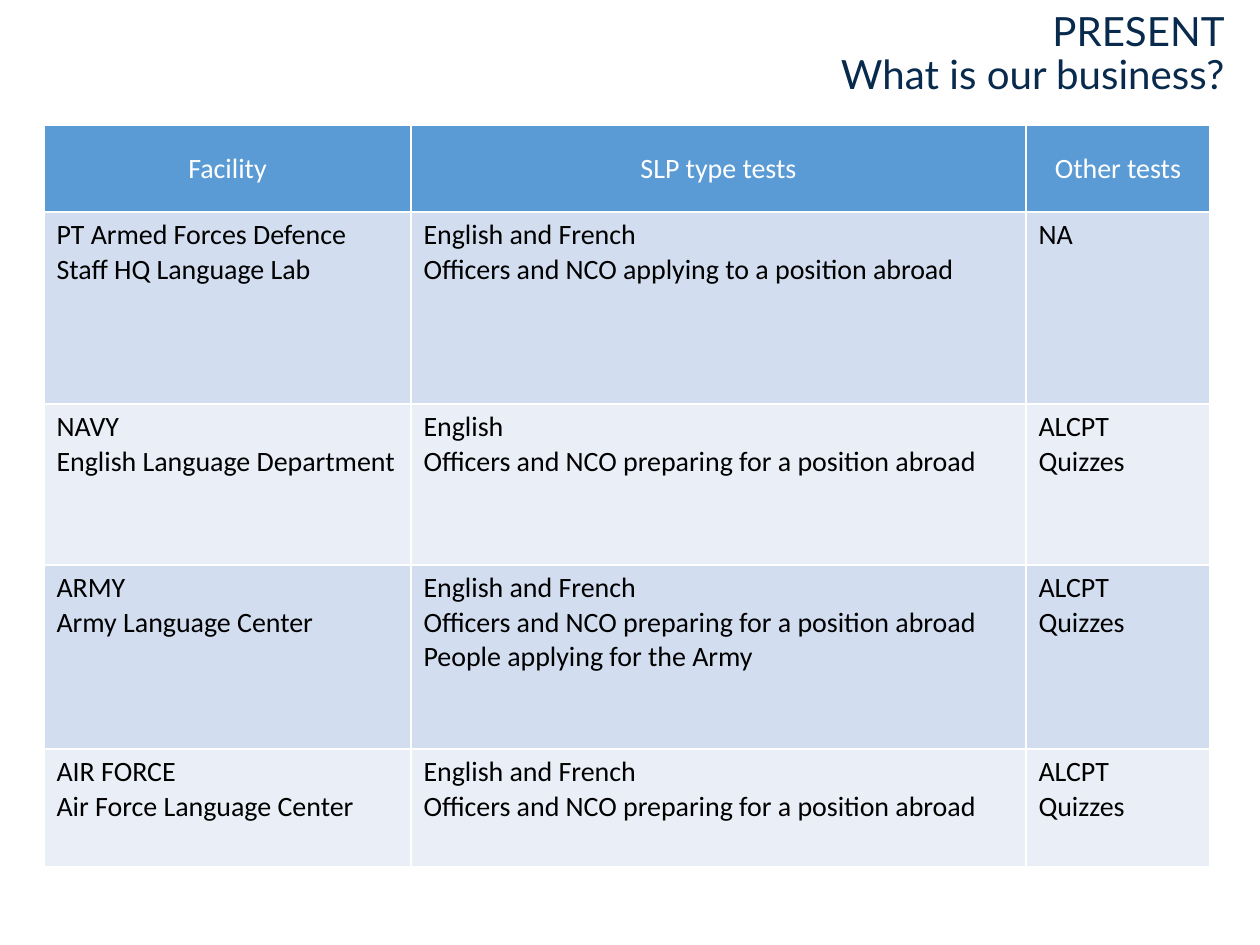
import dataclasses

import pptx
import pptx.dml.color
import pptx.enum.text
import pptx.oxml
import pptx.oxml.ns
import pptx.util

EMU_PER_PX = 914400 / 126
ALIGN = pptx.enum.text.PP_ALIGN
ANCHOR = pptx.enum.text.MSO_ANCHOR


@dataclasses.dataclass(frozen=True)
class Theme:
    """Colours, fonts and sizes of the slide."""
    title_font: str = "Lato"
    body_font: str = "Calibri"
    title_size: int = 23
    body_size: int = 16
    title_color: str = "082A4C"
    header_color: str = "FFFFFF"
    body_color: str = "000000"
    header_fill: str = "5B9BD5"
    bands: tuple = ("D2DEEF", "EAEFF7")
    rule_color: str = "FFFFFF"
    rule_width: int = 1


THEME = Theme()
HEADINGS = ["Facility", "SLP type tests", "Other tests"]
PREPARING = "Officers and NCO preparing for a position abroad"
QUIZZES = "ALCPT\nQuizzes"
FACILITIES = [
    ["PT Armed Forces Defence Staff HQ Language Lab",
     "English and French\nOfficers and NCO applying to a position abroad", "NA"],
    ["NAVY\nEnglish Language Department", f"English\n{PREPARING}", QUIZZES],
    ["ARMY\nArmy Language Center",
     f"English and French\n{PREPARING}\nPeople applying for the Army", QUIZZES],
    ["AIR FORCE\nAir Force Language Center", f"English and French\n{PREPARING}", QUIZZES],
]
COLUMN_WIDTHS = [367, 615, 184]
ROW_HEIGHTS = [87, 192, 161, 184, 118]


def px(length):
    """Turn px into EMU."""
    return pptx.util.Emu(round(length * EMU_PER_PX))


def rgb(color):
    """Turn a hex string into a colour."""
    return pptx.dml.color.RGBColor.from_string(color)


def format_text(text_frame, font, size, color, align, spacing=None):
    """Format every paragraph and run of a text frame."""
    for paragraph in text_frame.paragraphs:
        paragraph.alignment = align
        paragraph.line_spacing = spacing
        for run in paragraph.runs:
            run.font.name = font
            run.font.size = pptx.util.Pt(size)
            run.font.color.rgb = rgb(color)


def rule_cell(cell):
    """Draw the four borders of a cell."""
    properties = cell._tc.get_or_add_tcPr()
    width = pptx.util.Pt(THEME.rule_width)
    for side in "LRTB":
        properties.append(pptx.oxml.parse_xml(
            f'<a:ln{side} {pptx.oxml.ns.nsdecls("a")} w="{width}"><a:solidFill>'
            f'<a:srgbClr val="{THEME.rule_color}"/></a:solidFill></a:ln{side}>'))


def place_title(slide, left, top, width, height):
    """Place the right-aligned title in its box."""
    title = slide.shapes.title
    title.left, title.top, title.width, title.height = map(px, (left, top, width, height))
    frame = title.text_frame
    frame.text = "PRESENT\nWhat is our business?"
    frame.word_wrap = True
    frame.auto_size = pptx.enum.text.MSO_AUTO_SIZE.NONE
    frame.vertical_anchor = ANCHOR.MIDDLE
    frame.margin_right = px(35)
    format_text(frame, THEME.title_font, THEME.title_size, THEME.title_color,
                ALIGN.RIGHT, 0.9)


def place_facilities(slide, left, top):
    """Place the table of facilities and their tests."""
    rows = [HEADINGS, *FACILITIES]
    facilities = slide.shapes.add_table(
        len(rows), len(HEADINGS), px(left), px(top),
        px(sum(COLUMN_WIDTHS)), px(sum(ROW_HEIGHTS))).table
    for column, width in zip(facilities.columns, COLUMN_WIDTHS):
        column.width = px(width)
    for index, (row, height, texts) in enumerate(zip(facilities.rows, ROW_HEIGHTS, rows)):
        row.height = px(height)
        is_header = index == 0
        fill = THEME.header_fill if is_header else THEME.bands[(index - 1) % 2]
        color = THEME.header_color if is_header else THEME.body_color
        for cell, text in zip(row.cells, texts):
            cell.text_frame.text = text
            cell.vertical_anchor = ANCHOR.MIDDLE if is_header else ANCHOR.TOP
            format_text(cell.text_frame, THEME.body_font, THEME.body_size, color,
                        ALIGN.CENTER if is_header else ALIGN.LEFT)
            for run in (r for p in cell.text_frame.paragraphs for r in p.runs):
                run.font.bold = False
            rule_cell(cell)
            cell.fill.solid()
            cell.fill.fore_color.rgb = rgb(fill)


def main():
    """Build and save the slide."""
    deck = pptx.Presentation()
    deck.slide_width, deck.slide_height = px(1260), px(945)
    slide = deck.slides.add_slide(deck.slide_layouts[5])
    place_title(slide, 0, 14, 1260, 82)
    place_facilities(slide, 44, 125)
    deck.save("out.pptx")


if __name__ == "__main__":
    main()
